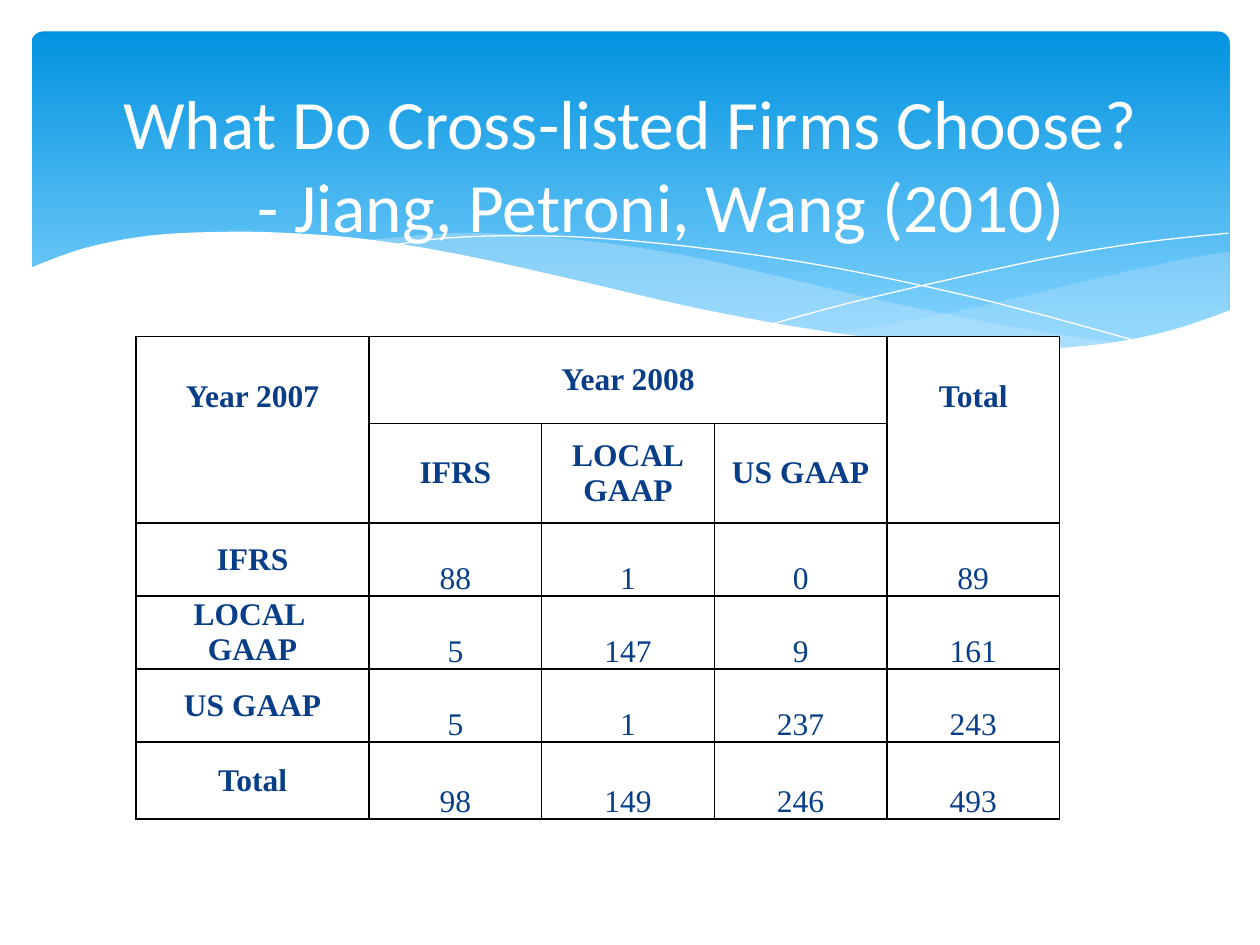
from dataclasses import dataclass

from lxml import etree
from pptx import Presentation
from pptx.dml.color import RGBColor
from pptx.enum import shapes, text
from pptx.oxml import ns
from pptx.util import Inches, Pt


@dataclass(frozen=True)
class Theme:
    top: str = "0293E0"
    low: str = "83D3FE"
    wave: str = "C6E7FC"
    white: str = "FFFFFF"
    ink: str = "073E87"
    rule: str = "000000"
    head: float = 39.6
    cell: float = 18
    sans: str = "Calibri"
    serif: str = "Times New Roman"


THEME = Theme()

# Wave edges as key points in inches; a smooth curve runs through each list.
RIGHT_TOP = [(9.76, 2), (9.48, 2.04), (9.06, 2.13), (8.61, 2.23),
             (8.05, 2.37), (7.29, 2.53), (6.61, 2.65)]
RIGHT_LOW = [(6.61, 2.65), (7.05, 2.71), (7.57, 2.76), (8.03, 2.78),
             (8.54, 2.76), (8.97, 2.7), (9.42, 2.59), (9.76, 2.47)]
MID_TOP = [(8.93, 2.73), (8.07, 2.6), (7.06, 2.4), (6.29, 2.22),
           (5.55, 2.05), (4.89, 1.94), (4.2, 1.87), (3.61, 1.85), (2.86, 1.91)]
MID_LOW = [(2.86, 1.91), (3.62, 2.03), (4.49, 2.22), (5.3, 2.4),
           (6.18, 2.58), (6.95, 2.7), (7.61, 2.77), (8.28, 2.78), (8.93, 2.73)]
FALL = [(3.09, 1.95), (3.53, 1.89), (4.16, 1.87), (4.89, 1.9), (5.82, 2),
        (6.65, 2.13), (7.6, 2.33), (8.31, 2.51), (9.07, 2.72)]
RISE = [(6.13, 2.57), (6.72, 2.41), (7.48, 2.23), (8.36, 2.04),
        (9.1, 1.92), (9.75, 1.85)]
FRONT = [(9.77, 2.46), (9.3, 2.62), (8.75, 2.73), (8.09, 2.77), (7.26, 2.72),
         (6.48, 2.62), (5.55, 2.45), (4.47, 2.2), (3.65, 2.02), (2.92, 1.9),
         (2.3, 1.85), (1.77, 1.84), (1.19, 1.87), (0.67, 1.97), (0.23, 2.13)]
BASE = [(0.23, 3.29), (9.77, 3.29)]

COLS = [1.85] + [1.37] * 4
ROWS = [0.69, 0.79, 0.58, 0.58, 0.58, 0.61]
DATA = [
    ["Year 2007", "Year 2008", "", "", "Total"],
    ["", "IFRS", "LOCAL\nGAAP", "US GAAP", ""],
    ["IFRS", "88", "1", "0", "89"],
    ["LOCAL \nGAAP", "5", "147", "9", "161"],
    ["US GAAP", "5", "1", "237", "243"],
    ["Total", "98", "149", "246", "493"],
]


def rgb(code):
    return RGBColor.from_string(code)


def style(par, face, size, color, bold=False):
    par.alignment = text.PP_ALIGN.CENTER
    font = par.font
    font.name, font.size, font.bold = face, Pt(size), bold
    font.color.rgb = rgb(color)


def smooth(keys, steps=5):
    """Sample a Catmull-Rom curve through the key points."""
    ends = [keys[0], *keys, keys[-1]]
    pts = [keys[0]]
    for a, b, c, d in zip(ends, ends[1:], ends[2:], ends[3:]):
        for i in range(1, steps + 1):
            t = i / steps
            pts.append(tuple(
                q + t / 2 * (r - p + t * (2 * p - 5 * q + 4 * r - s
                                          + t * (3 * (q - r) + s - p)))
                for p, q, r, s in zip(a, b, c, d)))
    return pts


def add_path(slide, pts, close):
    start, *rest = [(Inches(x), Inches(y)) for x, y in pts]
    pen = slide.shapes.build_freeform(*start, scale=1.0)
    pen.add_line_segments(rest, close=close)
    shape = pen.convert_to_shape()
    shape.shadow.inherit = False
    return shape


def add_wave(slide, pts, color, alpha=100):
    wave = add_path(slide, pts, True)
    wave.line.fill.background()
    wave.fill.solid()
    wave.fill.fore_color.rgb = rgb(color)
    if alpha < 100:
        tint = wave.fill._xPr.find(".//" + ns.qn("a:srgbClr"))
        etree.SubElement(tint, ns.qn("a:alpha"), val=str(alpha * 1000))


def add_curve(slide, keys):
    curve = add_path(slide, smooth(keys), False)
    curve.fill.background()
    curve.line.color.rgb = rgb(THEME.white)
    curve.line.width = Pt(0)


def add_panel(slide):
    panel = slide.shapes.add_shape(
        shapes.MSO_SHAPE.ROUNDED_RECTANGLE,
        Inches(0.25), Inches(0.25), Inches(9.51), Inches(2.7))
    panel.adjustments[0] = 0.034
    panel.shadow.inherit = False
    panel.line.fill.background()
    panel.fill.gradient()
    panel.fill.gradient_angle = 270
    stops = zip(panel.fill.gradient_stops, (0, 0.9), (THEME.top, THEME.low))
    for stop, place, color in stops:
        stop.position = place
        stop.color.rgb = rgb(color)


def set_title(slide, words):
    title = slide.shapes.title
    title.left, title.top = Inches(0.5), Inches(0.67)
    title.width, title.height = Inches(9), Inches(1.25)
    frame = title.text_frame
    frame.text = words
    frame.auto_size = text.MSO_AUTO_SIZE.NONE
    frame.vertical_anchor = text.MSO_ANCHOR.MIDDLE
    style(frame.paragraphs[0], THEME.sans, THEME.head, THEME.white)
    slide.shapes._spTree.append(title._element)  # bring to front


def set_edges(cell, skip):
    """Rule every side of the cell except the one in skip."""
    props = cell._tc.get_or_add_tcPr()
    for i, side in enumerate("LRTB"):
        line = etree.Element(ns.qn("a:ln" + side), w=str(Pt(1)))
        props.insert(i, line)
        if side == skip:
            etree.SubElement(line, ns.qn("a:noFill"))
        else:
            fill = etree.SubElement(line, ns.qn("a:solidFill"))
            etree.SubElement(fill, ns.qn("a:srgbClr"), val=THEME.rule)


def fill_cell(cell, words, row, col):
    number = row > 1 and col > 0
    corner = row < 2 and col in (0, 4)
    cell.fill.solid()
    cell.fill.fore_color.rgb = rgb(THEME.white)
    cell.margin_left = cell.margin_right = Inches(0.07)
    cell.margin_top = Inches(0.27 if corner and words else 0)
    cell.margin_bottom = 0
    anchor = text.MSO_ANCHOR
    cell.vertical_anchor = anchor.BOTTOM if number else anchor.MIDDLE
    cell.text_frame.text = words
    for par in cell.text_frame.paragraphs:
        style(par, THEME.serif, THEME.cell, THEME.ink, not number)
    set_edges(cell, "BT"[row] if corner else None)


def add_grid(slide):
    table = slide.shapes.add_table(
        len(ROWS), len(COLS), Inches(1.08), Inches(2.67),
        Inches(sum(COLS)), Inches(sum(ROWS))).table
    table.first_row = table.horz_banding = False
    for col, width in zip(table.columns, COLS):
        col.width = Inches(width)
    for row, height in zip(table.rows, ROWS):
        row.height = Inches(height)
    for r, line in enumerate(DATA):
        for c, words in enumerate(line):
            fill_cell(table.cell(r, c), words, r, c)
    table.cell(0, 1).merge(table.cell(0, 3))


def main():
    deck = Presentation()
    deck.slide_width, deck.slide_height = Inches(10), Inches(7.5)
    slide = deck.slides.add_slide(deck.slide_layouts[5])
    add_panel(slide)
    add_wave(slide, smooth(RIGHT_TOP) + smooth(RIGHT_LOW), THEME.wave, 29)
    add_wave(slide, smooth(MID_TOP) + smooth(MID_LOW), THEME.wave, 40)
    add_curve(slide, FALL)
    add_curve(slide, RISE)
    add_wave(slide, smooth(FRONT) + BASE, THEME.white)
    add_grid(slide)
    set_title(slide, "What Do Cross-listed Firms Choose?\v"
                     "\t- Jiang, Petroni, Wang (2010)")
    deck.save("out.pptx")


if __name__ == "__main__":
    main()
